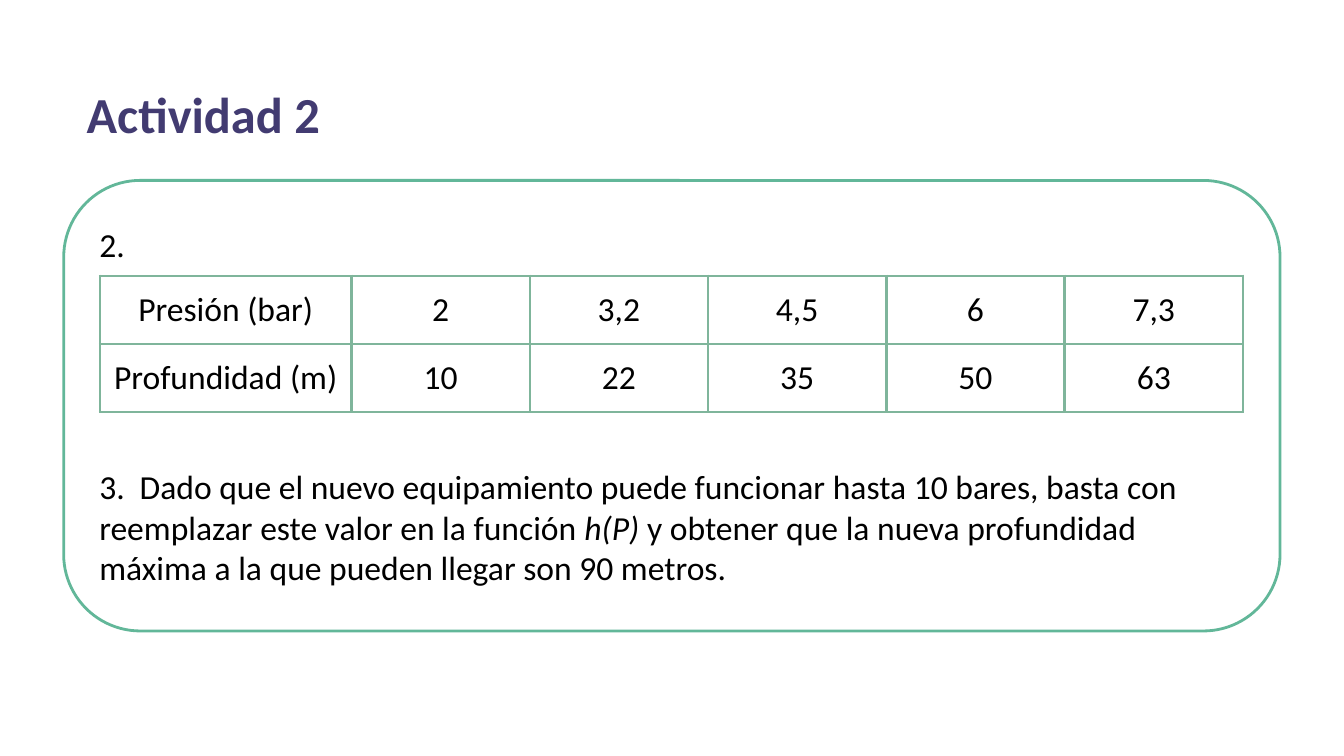
from lxml.etree import SubElement
from pptx import Presentation
from pptx.dml.color import RGBColor
from pptx.enum.shapes import MSO_SHAPE
from pptx.enum.text import MSO_ANCHOR, MSO_AUTO_SIZE, PP_ALIGN
from pptx.oxml.ns import qn
from pptx.util import Inches, Pt

GREEN, BORDER, PURPLE = "62B799", "7FB59B", "423B71"
BLACK, WHITE = "000000", "FFFFFF"


def color(code):
    return RGBColor.from_string(code)


def style(paragraph, size, code, bold=False):
    font = paragraph.font
    font.name, font.size, font.bold = "Calibri", Pt(size), bold
    font.color.rgb = color(code)


deck = Presentation()
deck.slide_width = Inches(10)
deck.slide_height = deck.slide_width * 9 // 16
column, row = deck.slide_width // 100, deck.slide_height // 100
inset = column
slide = deck.slides.add_slide(deck.slide_layouts[6])

answers = slide.shapes.add_shape(
    MSO_SHAPE.ROUNDED_RECTANGLE,
    int(column * 4.74), int(row * 23.87), int(column * 90.5), int(row * 59.6))
answers.shadow.inherit = False
answers.adjustments[0] = 0.17
answers.fill.background()
answers.line.color.rgb = color(GREEN)
answers.line.width = Pt(1.5)
body = answers.text_frame
body.word_wrap = True
body.vertical_anchor = MSO_ANCHOR.MIDDLE
body.margin_left = body.margin_right = body.margin_top = body.margin_bottom = inset

second = body.paragraphs[0]
second.add_run().text = "2."
third = body.add_paragraph()
third.space_before = Pt(108)
tabs = SubElement(third._p.get_or_add_pPr(), qn("a:tabLst"))
SubElement(tabs, qn("a:tab"), pos=str(column * 3), algn="l")
for piece, italic in (
    ("3.\tDado que el nuevo equipamiento puede funcionar hasta 10 bares, "
     "basta con reemplazar este valor en la función ", False),
    ("h(P)", True),
    (" y obtener que la nueva profundidad máxima a la que pueden llegar "
     "son 90 metros.", False),
):
    run = third.add_run()
    run.text = piece
    run.font.italic = italic
for answer in (second, third):
    answer.alignment = PP_ALIGN.LEFT
    style(answer, 18, BLACK)

readings = (
    ("Presión (bar)", "2", "3,2", "4,5", "6", "7,3"),
    ("Profundidad (m)", "10", "22", "35", "50", "63"),
)
widths = [int(column * 18.7)] + [int(column * 13.27)] * 5
height = int(row * 8.8)
grid = slide.shapes.add_table(
    len(readings), len(widths), int(column * 7.45), int(row * 36.5),
    sum(widths), height * len(readings)).table
grid.first_row = grid.horz_banding = False
for index, width in enumerate(widths):
    grid.columns[index].width = width
for line, values in enumerate(readings):
    grid.rows[line].height = height
    for index, value in enumerate(values):
        cell = grid.cell(line, index)
        cell.text = value
        cell.margin_left = cell.margin_right = inset
        cell.margin_top = cell.margin_bottom = inset
        label = cell.text_frame.paragraphs[0]
        label.alignment = PP_ALIGN.CENTER
        style(label, 18, BLACK)
        properties = cell._tc.get_or_add_tcPr()
        for side in ("lnL", "lnR", "lnT", "lnB"):
            edge = SubElement(properties, qn(f"a:{side}"), w=str(Pt(1.5)))
            paint = SubElement(edge, qn("a:solidFill"))
            SubElement(paint, qn("a:srgbClr"), val=BORDER)
        cell.fill.solid()
        cell.fill.fore_color.rgb = color(WHITE)

heading = slide.shapes.add_textbox(
    int(column * 5.7), int(row * 10.3), column * 58, int(row * 9.4)).text_frame
heading.word_wrap = True
heading.auto_size = MSO_AUTO_SIZE.SHAPE_TO_FIT_TEXT
heading.margin_left = heading.margin_right = int(column * 0.75)
heading.margin_top = heading.margin_bottom = int(column * 0.38)
title = heading.paragraphs[0]
title.add_run().text = "Actividad 2"
style(title, 27, PURPLE, bold=True)

deck.save("out.pptx")
